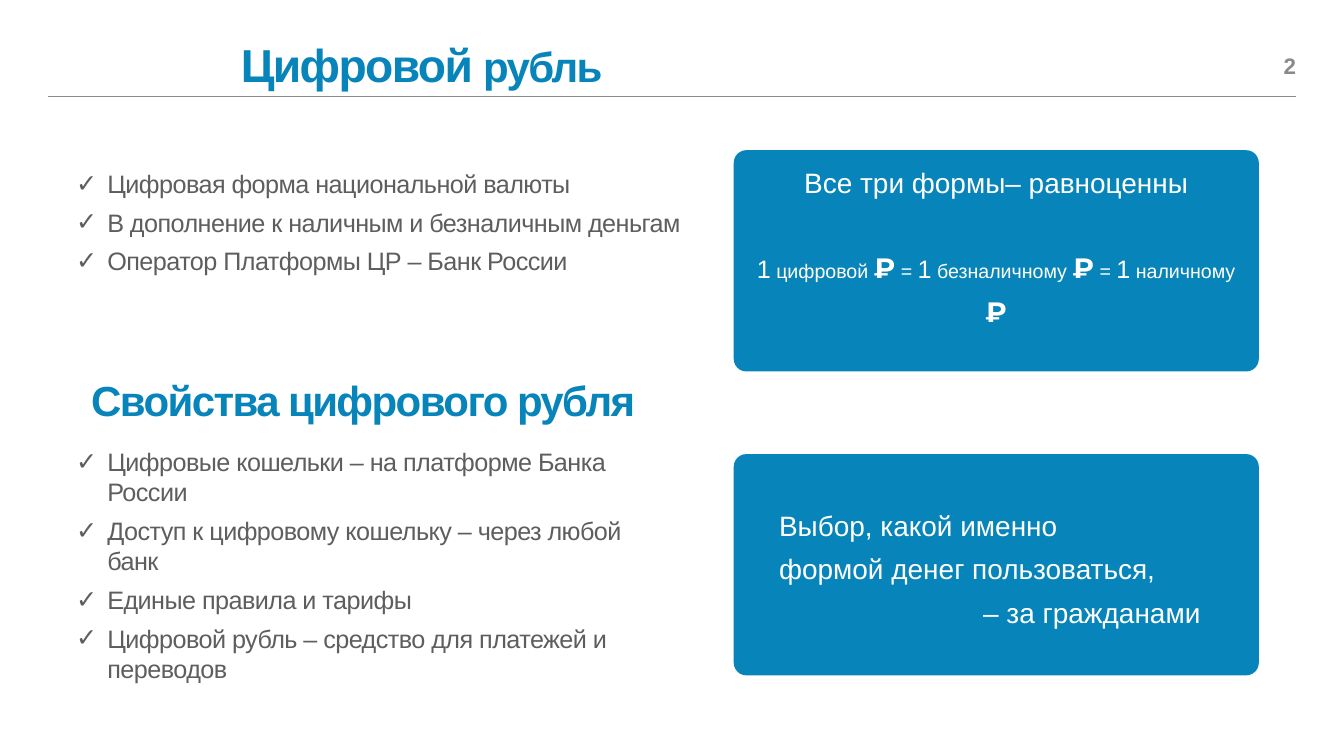
from lxml.etree import SubElement
from pptx import Presentation
from pptx.dml.color import RGBColor
from pptx.enum.shapes import MSO_CONNECTOR as Line, MSO_SHAPE as Form
from pptx.enum.text import MSO_ANCHOR as Anchor, PP_ALIGN as Align
from pptx.oxml.ns import qn
from pptx.util import Inches, Pt

BLUE, GREY, TEXT, WHITE = "0784BA", "888A8D", "5E5E5E", "FFFFFF"


def color(code):
    return RGBColor.from_string(code)


def write(para, text, size=40, font="Arial", ink=WHITE, bold=False, track=0):
    """Add a run to a paragraph; each newline becomes a line break."""
    for i, part in enumerate(text.split("\n")):
        if i:
            para.add_line_break()
        run = para.add_run()
        run.text = part
        run.font.size, run.font.name, run.font.bold = Pt(size), font, bold
        run.font.color.rgb = color(ink)
        if track:
            run.font._element.set("spc", str(round(track * 100)))


class Deck:
    """Holds the slide and its style."""

    def __init__(self, wide, high):
        self.file = Presentation()
        self.file.slide_width, self.file.slide_height = Inches(wide), Inches(high)
        self.slide = self.file.slides.add_slide(self.file.slide_layouts[6])
        self.shapes = self.slide.shapes

    def rule(self, left, right, top):
        line = self.shapes.add_connector(
            Line.STRAIGHT, *map(Inches, (left, top, right, top)))
        line.line.color.rgb = color(GREY)
        line.line.width = Pt(0.5)
        SubElement(line._element.spPr, qn("a:effectLst"))

    def box(self, *area, pad=0.06, anchor=Anchor.TOP, on=None):
        frame = (on or self.shapes).add_textbox(*map(Inches, area)).text_frame
        frame.word_wrap, frame.vertical_anchor = True, anchor
        frame.margin_left = frame.margin_right = Inches(pad)
        frame.margin_top = frame.margin_bottom = Inches(pad)
        return frame

    def title(self, *area, parts):
        para = self.box(*area).paragraphs[0]
        for text, size in parts:
            write(para, text, size=size, ink=BLUE, bold=True, track=-2.3)

    def checks(self, *area, items):
        frame = self.box(*area)
        for i, item in enumerate(items):
            para = frame.add_paragraph() if i else frame.paragraphs[0]
            props = para._p.get_or_add_pPr()
            props.set("marL", str(Inches(0.62)))
            props.set("indent", str(-Inches(0.62)))
            SubElement(props, qn("a:buFont"), typeface="Arial")
            SubElement(props, qn("a:buChar"), char="✓")
            para.space_after = Pt(6)
            if i:
                para.space_before = Pt(6)
            write(para, item, size=36, ink=TEXT, track=-0.8)

    def card(self, top):
        """Draw a blue card and return the shapes of its group."""
        shapes = self.shapes.add_group_shape().shapes
        card = shapes.add_shape(
            Form.ROUNDED_RECTANGLE, *map(Inches, (14.56, top, 10.42, 4.39)))
        card.adjustments[0] = 0.057
        card.shadow.inherit = False
        card.fill.solid()
        card.fill.fore_color.rgb = color(BLUE)
        card.line.fill.background()
        return shapes


def main():
    deck = Deck(26.67, 15)
    deck.rule(0.95, 25.72, 1.9)
    deck.title(4.72, 0.66, 8.3, 1.22, parts=[("Цифровой", 66), (" рубль", 60)])
    deck.checks(1.45, 3.28, 12.64, 2.27, items=[
        "Цифровая форма национальной валюты",
        "В дополнение к наличным и безналичным деньгам",
        "Оператор Платформы ЦР – Банк России",
    ])
    deck.title(1.75, 7.37, 11.01, 1.12, parts=[("Свойства цифрового рубля", 60)])
    deck.checks(1.45, 8.8, 11.95, 4.86, items=[
        "Цифровые кошельки – на платформе Банка России",
        "Доступ к цифровому кошельку – через любой банк",
        "Единые правила и тарифы",
        "Цифровой рубль – средство для платежей и переводов",
    ])

    frame = deck.box(14.77, 3.08, 9.99, 4.2, pad=0, on=deck.card(2.98))
    head, sums = frame.paragraphs[0], frame.add_paragraph()
    for para in (head, sums):
        para.alignment, para.line_spacing = Align.CENTER, 1.3
    write(head, "Все три формы– равноценны")
    sums.space_before = Pt(60)
    for i, kind in enumerate(("цифровой", "безналичному", "наличному")):
        if i:
            write(sums, " = ", size=28)
        write(sums, "1", size=36)
        write(sums, f" {kind} ", size=28)
        write(sums, "₽", font="Montserrat", bold=True)

    frame = deck.box(15.46, 9.87, 8.62, 2.63, pad=0,
                     anchor=Anchor.MIDDLE, on=deck.card(9.01))
    choice, who = frame.paragraphs[0], frame.add_paragraph()
    choice.line_spacing = who.line_spacing = 1.3
    write(choice, "Выбор, какой именно\nформой денег пользоваться,")
    who._p.get_or_add_pPr().set("marL", str(Inches(4.05)))
    write(who, "– за гражданами")

    page = deck.box(24.09, 0.94, 1.63, 0.71, pad=0, anchor=Anchor.MIDDLE)
    page.paragraphs[0].alignment = Align.RIGHT
    write(page.paragraphs[0], "2", size=32, ink=GREY, bold=True)
    deck.file.save("out.pptx")


if __name__ == "__main__":
    main()
